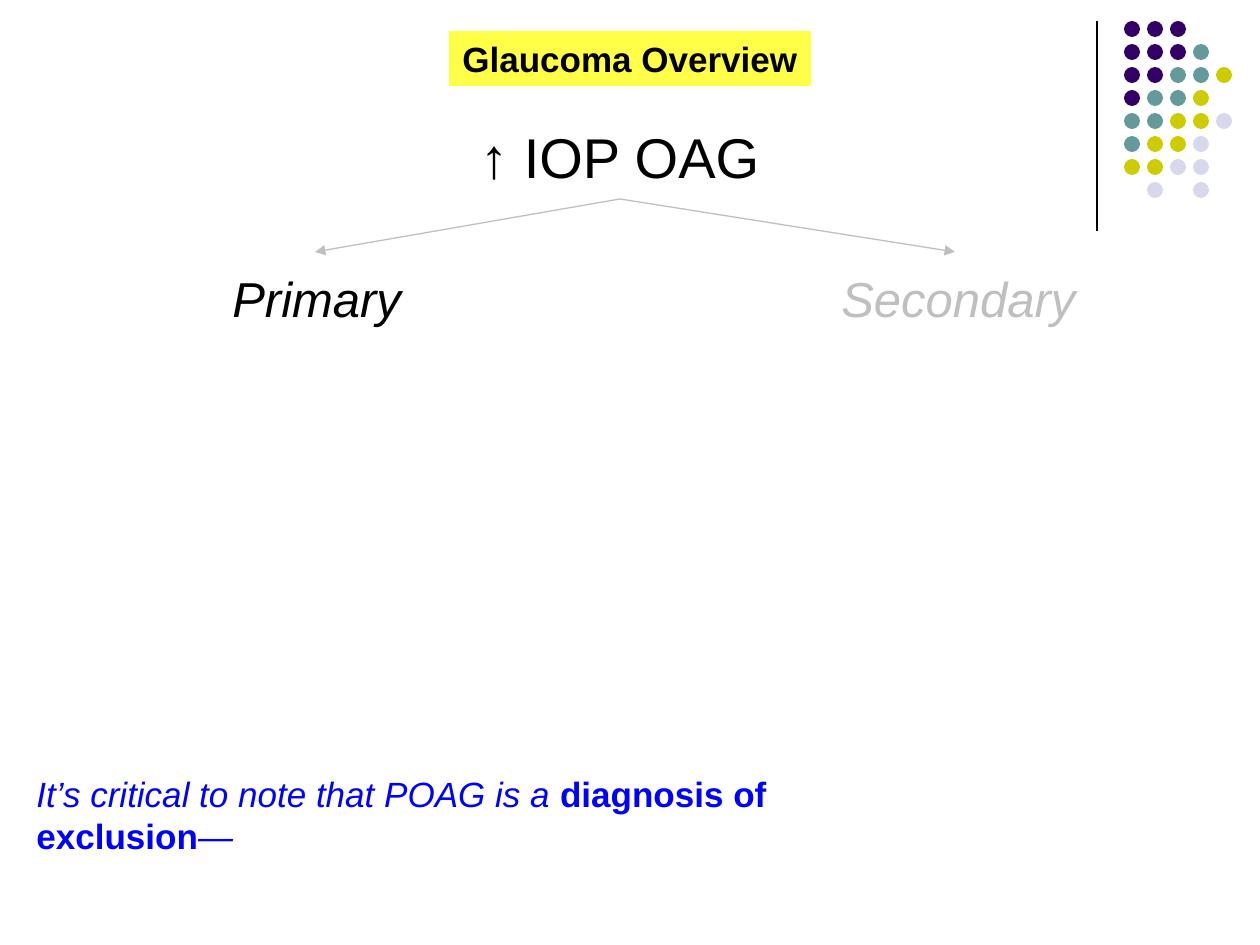
import dataclasses

import lxml.etree
import pptx
import pptx.dml.color
import pptx.enum.shapes
import pptx.enum.text
import pptx.oxml.ns
import pptx.util

EMU_PER_PX = 914400 // 126
LEFT = pptx.enum.text.PP_ALIGN.LEFT
CENTER = pptx.enum.text.PP_ALIGN.CENTER
FIXED = pptx.enum.text.MSO_AUTO_SIZE.NONE
GROW = pptx.enum.text.MSO_AUTO_SIZE.SHAPE_TO_FIT_TEXT
qn = pptx.oxml.ns.qn


@dataclasses.dataclass(frozen=True)
class Theme:
    font: str = "Arial"
    ink: str = "000000"
    muted: str = "BFBFBF"
    note: str = "0000FF"
    banner: str = "FFFF47"
    purple: str = "330066"
    teal: str = "669999"
    olive: str = "CCCC00"
    lilac: str = "D8D8EC"
    heading_size: int = 32
    branch_size: int = 28
    text_size: int = 20
    line_width: float = 0.75


THEME = Theme()
DOT_COLORS = {"P": THEME.purple, "T": THEME.teal, "O": THEME.olive, "L": THEME.lilac}
DOT_ROWS = ("PPP", "PPPT", "PPTTO", "PTTO", "TTOOL", "TOOL", "OOLL", ".L.L")


def px(n):
    return pptx.util.Emu(n * EMU_PER_PX)


def rgb(color):
    return pptx.dml.color.RGBColor.from_string(color)


def place(s, box):
    for name, value in zip(("left", "top", "width", "height"), box):
        setattr(s, name, px(value))


def write(s, runs, size, color, align=LEFT, wrap=False, fit=GROW):
    """Fill a shape with one paragraph of (text, font settings) runs."""
    tf = s.text_frame
    frame = {
        "word_wrap": wrap,
        "auto_size": fit,
        "vertical_anchor": pptx.enum.text.MSO_ANCHOR.TOP,
    }
    for name, value in frame.items():
        setattr(tf, name, value)
    p = tf.paragraphs[0]
    p.alignment = align
    for text, style in runs:
        r = p.add_run()
        r.text = text
        font = {"name": THEME.font, "size": pptx.util.Pt(size), **style}
        for name, value in font.items():
            setattr(r.font, name, value)
        r.font.color.rgb = rgb(color)


def add_title(slide, box, text):
    """Use a fixed size: a growing title keeps the layout's height as its minimum."""
    s = slide.shapes.title
    place(s, box)
    s.fill.solid()
    s.fill.fore_color.rgb = rgb(THEME.banner)
    write(s, [(text, {"bold": True})], THEME.text_size, THEME.ink, CENTER, fit=FIXED)


def add_text(slide, box, runs, size, color, **layout):
    s = slide.shapes.add_textbox(*map(px, box))
    write(s, runs, size, color, **layout)


def add_line(slide, start, end, color, arrow=False):
    s = slide.shapes.add_connector(
        pptx.enum.shapes.MSO_CONNECTOR.STRAIGHT, *map(px, start + end))
    s.line.color.rgb = rgb(color)
    s.line.width = pptx.util.Pt(THEME.line_width)
    if arrow:
        ln = s._element.spPr.find(qn("a:ln"))
        lxml.etree.SubElement(ln, qn("a:tailEnd"), type="triangle")
    lxml.etree.SubElement(s._element.spPr, qn("a:effectLst"))


def add_dots(slide, left, top, pitch, size):
    group = slide.shapes.add_group_shape()
    for row, codes in enumerate(DOT_ROWS):
        for col, code in enumerate(codes):
            if code not in DOT_COLORS:
                continue
            box = (left + col * pitch, top + row * pitch, size, size)
            s = group.shapes.add_shape(
                pptx.enum.shapes.MSO_SHAPE.OVAL, *map(px, box))
            s.shadow.inherit = False
            s.fill.solid()
            s.fill.fore_color.rgb = rgb(DOT_COLORS[code])
            s.line.fill.background()


def main():
    prs = pptx.Presentation()
    prs.slide_width, prs.slide_height = px(1260), px(945)
    slide = prs.slides.add_slide(prs.slide_layouts.get_by_name("Title Only"))

    add_line(slide, (1097, 21), (1097, 231), THEME.ink)
    add_dots(slide, left=1124, top=21, pitch=23, size=16)

    add_title(slide, (449, 31, 362, 55), "Glaucoma Overview")
    add_text(slide, (462, 116, 316, 81), [("↑ IOP OAG", {})],
             THEME.heading_size, THEME.ink, align=CENTER)

    branches = (
        ("Primary", (220, 262, 197, 72), (315, 252), THEME.ink),
        ("Secondary", (829, 262, 262, 72), (955, 252), THEME.muted),
    )
    for text, box, tip, color in branches:
        add_line(slide, (620, 199), tip, THEME.muted, arrow=True)
        add_text(slide, box, [(text, {"italic": True})], THEME.branch_size, color)

    note = [
        ("It’s critical to note that POAG is a ", {"italic": True}),
        ("diagnosis of exclusion", {"bold": True}),
        ("—", {"italic": True}),
    ]
    add_text(slide, (24, 766, 764, 97), note, THEME.text_size, THEME.note, wrap=True)

    prs.save("out.pptx")


if __name__ == "__main__":
    main()
